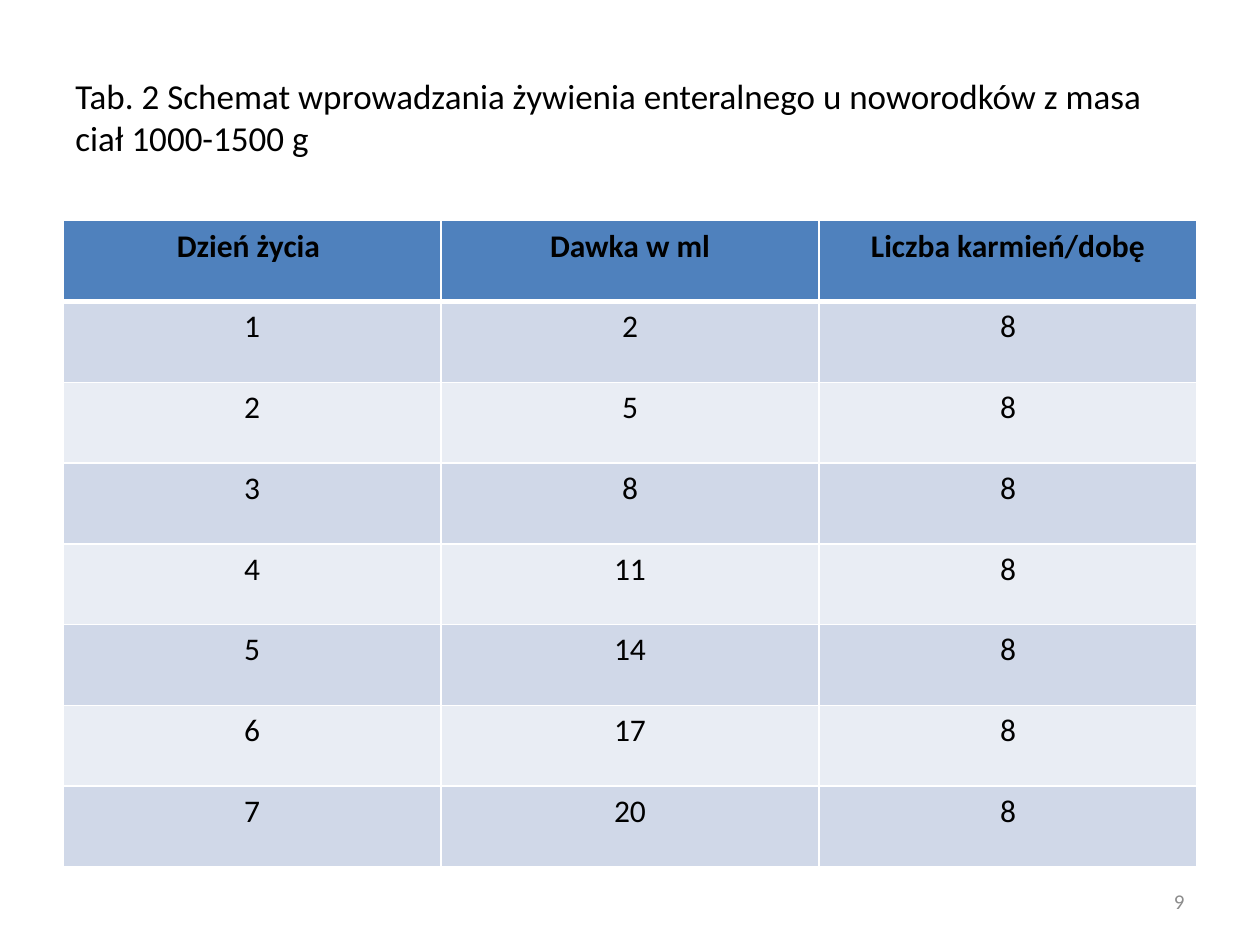
from lxml import etree
from pptx import Presentation
from pptx.dml.color import RGBColor
from pptx.enum.text import MSO_ANCHOR, PP_ALIGN
from pptx.oxml.ns import qn
from pptx.util import Cm, Pt

LEFT, CENTER, RIGHT = PP_ALIGN.LEFT, PP_ALIGN.CENTER, PP_ALIGN.RIGHT
MIDDLE = MSO_ANCHOR.MIDDLE

BLACK = RGBColor(0x00, 0x00, 0x00)
WHITE = RGBColor(0xFF, 0xFF, 0xFF)
GRAY = RGBColor(0x8C, 0x8C, 0x8C)
HEADER_BLUE = RGBColor(0x4F, 0x81, 0xBD)
BAND_DARK = RGBColor(0xD0, 0xD8, 0xE8)
BAND_LIGHT = RGBColor(0xE9, 0xED, 0xF4)

FONT = "Calibri"
TITLE = "Tab. 2 Schemat wprowadzania żywienia enteralnego u noworodków z masa ciał 1000-1500 g"
HEADINGS = ("Dzień życia ", "Dawka w ml", "Liczba karmień/dobę")
DOSES = (2, 5, 8, 11, 14, 17, 20)
FEEDINGS_PER_DAY = 8


def write_run(paragraph, text, size, color, align, bold=False):
    """Add one formatted run to an aligned paragraph."""
    paragraph.alignment = align
    run = paragraph.add_run()
    run.text = text
    run.font.name = FONT
    run.font.size = Pt(size)
    run.font.bold = bold
    run.font.color.rgb = color


def add_caption(slide, box, text, size, color, align):
    """Place a vertically centred line of text in the given box."""
    frame = slide.shapes.add_textbox(*box).text_frame
    frame.word_wrap = True
    frame.vertical_anchor = MIDDLE
    write_run(frame.paragraphs[0], text, size, color, align)


def set_borders(cell, bottom_width):
    """Draw white borders around a cell, with its own bottom width."""
    properties = cell._tc.get_or_add_tcPr()
    for side, width in (("L", 1), ("R", 1), ("T", 1), ("B", bottom_width)):
        line = etree.SubElement(properties, qn(f"a:ln{side}"), w=str(Pt(width)))
        fill = etree.SubElement(line, qn("a:solidFill"))
        etree.SubElement(fill, qn("a:srgbClr"), val=str(WHITE))


def add_feeding_table(slide, box):
    """Fill the given box with the feeding schedule."""
    rows = [HEADINGS] + [(day, dose, FEEDINGS_PER_DAY) for day, dose in enumerate(DOSES, 1)]
    table = slide.shapes.add_table(len(rows), len(HEADINGS), *box).table
    for row_index, values in enumerate(rows):
        is_header = row_index == 0
        band = BAND_DARK if row_index % 2 else BAND_LIGHT
        for column_index, value in enumerate(values):
            cell = table.cell(row_index, column_index)
            set_borders(cell, 3 if is_header else 1)
            cell.fill.solid()
            cell.fill.fore_color.rgb = HEADER_BLUE if is_header else band
            write_run(cell.text_frame.paragraphs[0], str(value), 18, BLACK, CENTER, is_header)


def main():
    """Build and save the slide."""
    presentation = Presentation()
    presentation.slide_width, presentation.slide_height = Cm(25.4), Cm(19.05)
    slide = presentation.slides.add_slide(presentation.slide_layouts[6])
    margin, width = Cm(1.27), Cm(22.86)
    add_caption(slide, (margin, Cm(0.76), width, Cm(3.18)), TITLE, 20, BLACK, LEFT)
    add_feeding_table(slide, (margin, Cm(4.45), width, Cm(13.03)))
    number_width = Cm(5.92)
    number_box = (margin + width - number_width, Cm(17.65), number_width, Cm(1.02))
    add_caption(slide, number_box, "9", 12, GRAY, RIGHT)
    presentation.save("out.pptx")


if __name__ == "__main__":
    main()
